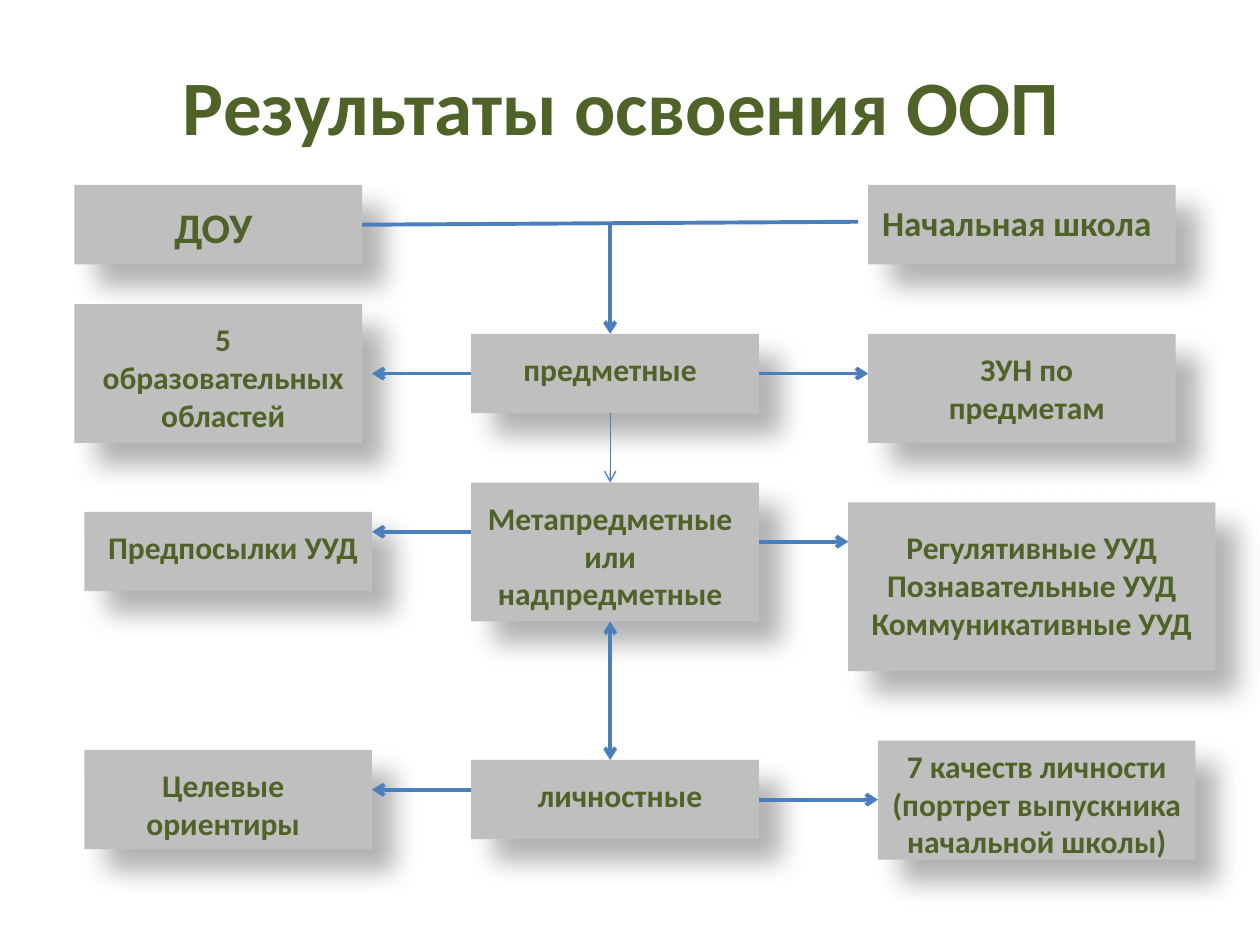
from dataclasses import dataclass

from lxml import etree
from pptx import Presentation
from pptx.dml.color import RGBColor
from pptx.enum.shapes import MSO_CONNECTOR, MSO_SHAPE
from pptx.enum.text import MSO_ANCHOR, MSO_AUTO_SIZE, PP_ALIGN
from pptx.oxml import parse_xml
from pptx.oxml.ns import nsdecls, qn
from pptx.util import Cm, Pt

RECT = MSO_SHAPE.RECTANGLE
STRAIGHT = MSO_CONNECTOR.STRAIGHT
CENTER = PP_ALIGN.CENTER
MIDDLE = MSO_ANCHOR.MIDDLE
FIT_SHAPE = MSO_AUTO_SIZE.SHAPE_TO_FIT_TEXT

GREEN = RGBColor(0x4F, 0x62, 0x28)
GRAY = RGBColor(0xBF, 0xBF, 0xBF)
BLUE = RGBColor(0x4B, 0x7E, 0xBC)
BLACK = RGBColor(0x00, 0x00, 0x00)

FONT = "Calibri"
LEFT, MID, RIGHT = 1.5, 9.5, 17.5
WIDTH = 5.8
MID_END = MID + WIDTH
AXIS = 12.3
ARROW_END = 7.5


@dataclass
class Node:
    box: tuple[float, float, float, float]
    label: tuple[float, float, float, float]
    text: str
    size: int = 18


@dataclass
class Link:
    start: tuple[float, float]
    end: tuple[float, float]
    width: float = 2.25
    head: bool = False
    tail: bool = True


NODES = [
    Node((LEFT, 3.73, WIDTH, 1.6), (1.7, 3.93, 5.2, 1.28), "ДОУ", 24),
    Node((RIGHT, 3.73, 6.2, 1.6), (17.3, 3.93, 6.4, 1.11), "Начальная школа", 20),
    Node((LEFT, 6.13, WIDTH, 2.8), (1.7, 6.33, 5.6, 2.56), "5 образовательных областей"),
    Node((1.7, 10.32, WIDTH, 1.6), (1.9, 10.52, 5.6, 1.03), "Предпосылки УУД"),
    Node((1.7, 15.12, WIDTH, 2), (1.7, 15.32, 5.6, 1.8), "Целевые ориентиры"),
    Node((MID, 15.32, WIDTH, 1.6), (9.7, 15.52, 5.6, 1.03), "личностные"),
    Node((MID, 9.73, WIDTH, 2.8), (MID, 9.93, 5.6, 2.56), "Метапредметные или\nнадпредметные"),
    Node((MID, 6.73, WIDTH, 1.6), (MID, 6.93, 5.6, 1.03), "предметные"),
    Node((RIGHT, 6.73, 6.2, 2.2), (17.9, 6.93, 5.6, 1.8), "ЗУН по предметам"),
    Node((17.1, 10.13, 7.4, 3.4), (17.3, 10.52, 7, 2.56),
         "Регулятивные УУД\nПознавательные УУД\nКоммуникативные УУД"),
    Node((17.7, 14.93, 6.4, 2.4), (RIGHT, 14.93, 6.8, 2.56),
         "7 качеств личности (портрет выпускника начальной школы)"),
]

LINKS = [
    Link((LEFT + WIDTH, 4.53), (17.3, 4.47), tail=False),
    *[Link((MID, y), (ARROW_END, y)) for y in (7.53, 10.72, 15.92)],
    *[Link((MID_END, y), (x, y)) for x, y in ((RIGHT, 7.53), (17.1, 10.92), (17.7, 16.12))],
    Link((AXIS, 8.33), (AXIS, 9.73), width=0.75),
    Link((AXIS, 4.53), (AXIS, 6.73)),
    Link((AXIS, 12.53), (AXIS, 15.32), head=True),
]


def write(tf, text: str, *, size: int, color: RGBColor = GREEN, bold: bool = True) -> None:
    tf.word_wrap = True
    for i, line in enumerate(text.split("\n")):
        p = tf.add_paragraph() if i else tf.paragraphs[0]
        p.alignment = CENTER
        r = p.add_run()
        r.text = line
        r.font.name = FONT
        r.font.size = Pt(size)
        r.font.bold = bold
        r.font.color.rgb = color


def add_box(slide, node: Node) -> None:
    sp = slide.shapes.add_shape(RECT, *map(Cm, node.box))
    sp.fill.solid()
    sp.fill.fore_color.rgb = GRAY
    sp.line.fill.background()
    sp._element.spPr.append(parse_xml(
        f'<a:effectLst {nsdecls("a")}>'
        f'<a:outerShdw blurRad="{Pt(15)}" dist="{Pt(18)}" dir="2700000" algn="tl" rotWithShape="0">'
        f'<a:srgbClr val="{BLACK}"><a:alpha val="30000"/></a:srgbClr>'
        '</a:outerShdw></a:effectLst>'))


def add_label(slide, node: Node) -> None:
    tf = slide.shapes.add_textbox(*map(Cm, node.label)).text_frame
    write(tf, node.text, size=node.size)
    tf.auto_size = FIT_SHAPE


def add_link(slide, link: Link) -> None:
    sp = slide.shapes.add_connector(STRAIGHT, *map(Cm, link.start + link.end))
    sp.line.color.rgb = BLUE
    sp.line.width = Pt(link.width)
    ln = sp.line._get_or_add_ln()
    for tag, shown in (("a:headEnd", link.head), ("a:tailEnd", link.tail)):
        if shown:
            etree.SubElement(ln, qn(tag), type="arrow")
    etree.SubElement(sp._element.spPr, qn("a:effectLst"))


def main() -> None:
    prs = Presentation()
    prs.slide_width, prs.slide_height = Cm(25.4), Cm(19.05)
    slide = prs.slides.add_slide(prs.slide_layouts[5])

    title = slide.shapes.title
    title.left, title.top, title.width, title.height = map(Cm, (1.1, 0.53, 22.86, 3.18))
    title.text_frame.vertical_anchor = MIDDLE
    write(title.text_frame, "Результаты освоения ООП", size=44)

    for node in NODES:
        add_box(slide, node)
    for node in NODES:
        add_label(slide, node)
    for link in LINKS:
        add_link(slide, link)

    prs.save("out.pptx")


if __name__ == "__main__":
    main()
